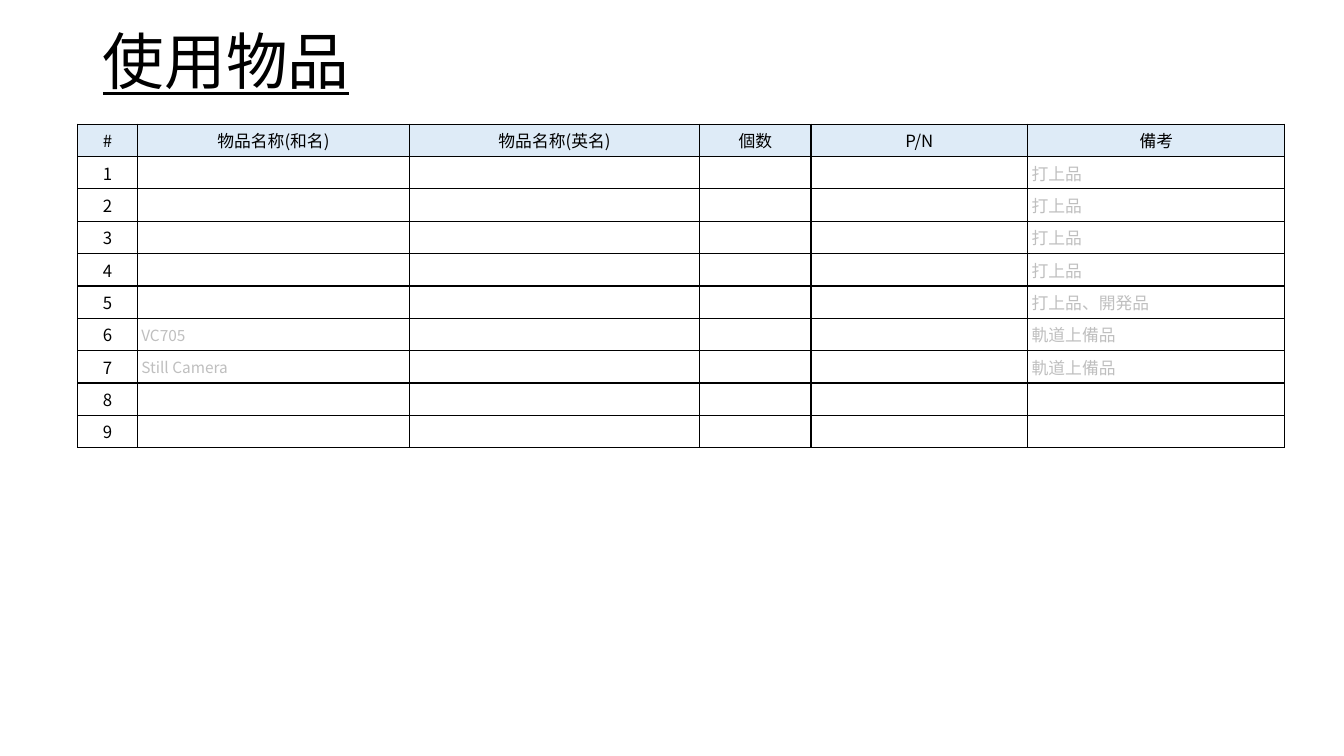
from lxml.etree import SubElement
from pptx import Presentation
from pptx.dml.color import RGBColor
from pptx.enum.text import MSO_ANCHOR, PP_ALIGN
from pptx.oxml.ns import qn
from pptx.util import Cm, Pt

TITLE = "使用物品"
HEADERS = ["#", "物品名称(和名)", "物品名称(英名)", "個数", "P/N", "備考"]
NAMES = {6: "VC705", 7: "Still Camera"}
REMARKS = ["打上品"] * 4 + ["打上品、開発品"] + ["軌道上備品"] * 2 + [""] * 2
ROWS = [[str(n), NAMES.get(n, ""), "", "", "", remark]
        for n, remark in enumerate(REMARKS, 1)]

FONT = "Noto Sans CJK JP"
COLORS = {"text": "000000", "sample": "BFBFBF", "header": "DEEBF7", "border": "000000"}
COL_WIDTHS = [1.5, 6.86, 7.31, 2.81, 5.46, 6.48]
ROW_HEIGHT = 0.81
INSET = Cm(0.1)


def rgb(name):
    return RGBColor.from_string(COLORS[name])


def format_runs(p, size, color):
    for r in p.runs:
        r.font.size = Pt(size)
        r.font.name = FONT
        r.font.color.rgb = rgb(color)
        SubElement(r.font._element, qn("a:ea"), typeface=FONT)


def add_borders(cell):
    """Insert the four edges ahead of the cell fill, as the schema requires."""
    tcPr = cell._tc.get_or_add_tcPr()
    for i, edge in enumerate(("a:lnL", "a:lnR", "a:lnT", "a:lnB")):
        ln = SubElement(tcPr, qn(edge), w=str(Pt(1)))
        fill = SubElement(ln, qn("a:solidFill"))
        SubElement(fill, qn("a:srgbClr"), val=COLORS["border"])
        tcPr.insert(i, ln)


def fill_cell(cell, text, row, col):
    header, name = row == 0, row > 0 and col == 1
    cell.vertical_anchor = MSO_ANCHOR.MIDDLE
    cell.margin_left = INSET
    cell.margin_right = cell.margin_top = cell.margin_bottom = 0 if name else INSET
    if header:
        cell.fill.solid()
        cell.fill.fore_color.rgb = rgb("header")
    else:
        cell.fill.background()
    add_borders(cell)

    p = cell.text_frame.paragraphs[0]
    p.text = text
    label = header or col == 0
    p.alignment = PP_ALIGN.CENTER if label else PP_ALIGN.LEFT
    format_runs(p, 11 if name else 12, "text" if label else "sample")
    if not text:
        SubElement(p._p, qn("a:endParaRPr"), sz="1200")


prs = Presentation()
prs.slide_width, prs.slide_height = Cm(33.87), Cm(19.05)
s = prs.slides.add_slide(prs.slide_layouts[5])

title = s.shapes.title
title.left, title.top, title.width, title.height = Cm(2.34), Cm(0.38), Cm(29.21), Cm(2.49)
tf = title.text_frame
tf.text = TITLE
tf.vertical_anchor = MSO_ANCHOR.MIDDLE
p = tf.paragraphs[0]
p.alignment = PP_ALIGN.LEFT
p.line_spacing = 0.9
format_runs(p, 44, "text")
p.runs[0].font.underline = True

grid = [HEADERS] + ROWS
table = s.shapes.add_table(len(grid), len(HEADERS), Cm(1.96), Cm(3.13),
                           Cm(sum(COL_WIDTHS)), Cm(ROW_HEIGHT * len(grid))).table
table.horz_banding = False
for column, width in zip(table.columns, COL_WIDTHS):
    column.width = Cm(width)
for i, values in enumerate(grid):
    table.rows[i].height = Cm(ROW_HEIGHT)
    for j, text in enumerate(values):
        fill_cell(table.cell(i, j), text, i, j)

prs.save("out.pptx")
